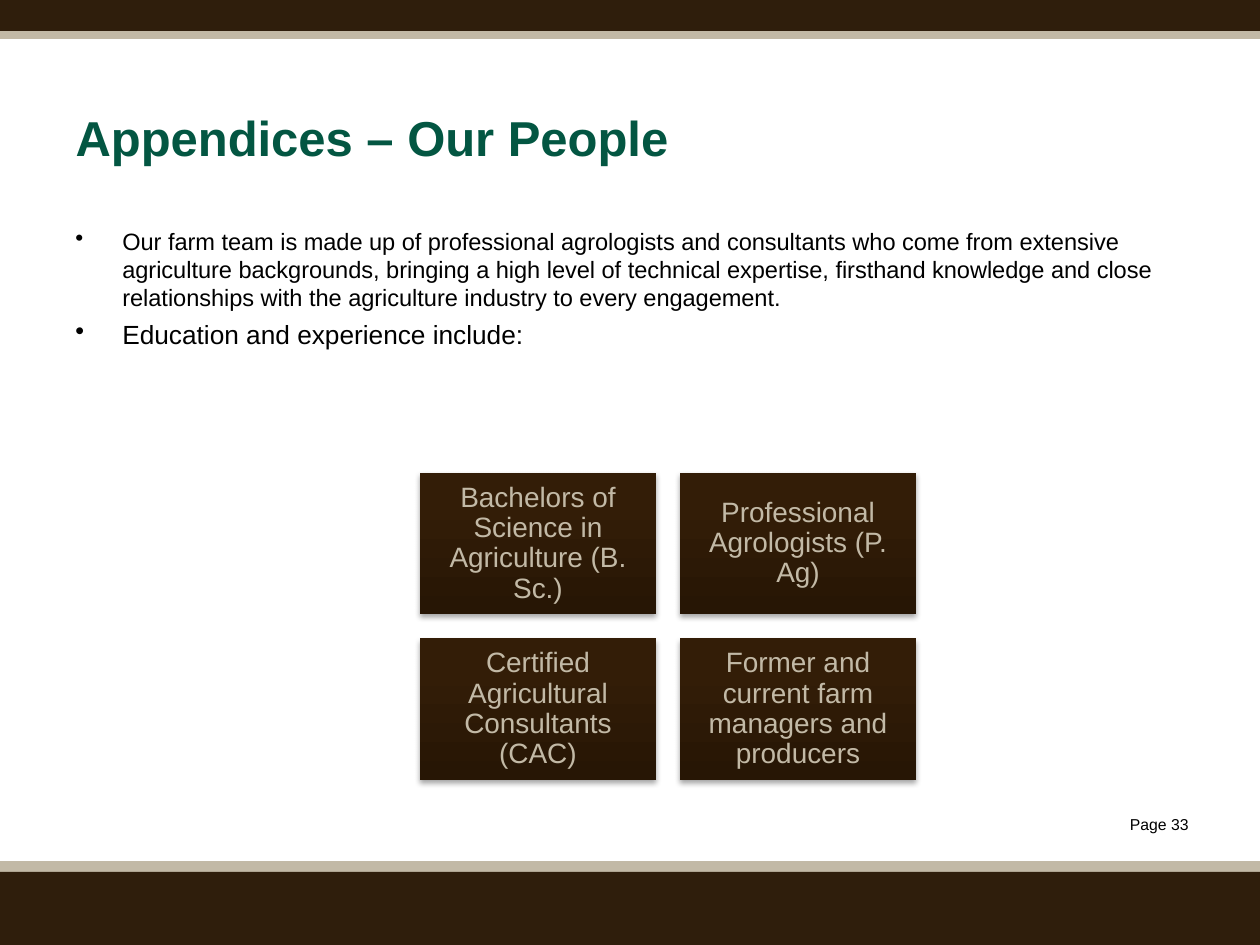
from lxml import etree
from pptx import Presentation, util as u
from pptx.dml.color import RGBColor
from pptx.enum import shapes, text
from pptx.oxml.ns import qn

PX = u.Inches(1) / 126
WIDTH, HEIGHT = 1260, 945
FONT = "Arial"
COLORS = {
    "brown": "2F1E0C",
    "tan": "C2B9A6",
    "green": "035642",
    "black": "000000",
    "card_bottom": "271605",
    "card_top": "331D07",
}
CREDENTIALS = [
    "Bachelors of Science in Agriculture (B. Sc.)",
    "Professional Agrologists (P. Ag)",
    "Certified Agricultural Consultants (CAC)",
    "Former and current farm managers and producers",
]
BULLETS = [
    ("Our farm team is made up of professional agrologists and consultants who come "
     "from extensive agriculture backgrounds, bringing a high level of technical "
     "expertise, firsthand knowledge and close relationships with the agriculture "
     "industry to every engagement.", 13.5),
    ("Education and experience include:", 15),
]


def px(value):
    return u.Emu(round(value * PX))


def color(name):
    return RGBColor.from_string(COLORS[name])


def style(paragraph, size, color_name, bold=False):
    font = paragraph.font
    font.name, font.size, font.bold = FONT, u.Pt(size), bold
    font.color.rgb = color(color_name)


def add_rectangle(slide, left, top, width, height):
    shape = slide.shapes.add_shape(
        shapes.MSO_SHAPE.RECTANGLE, px(left), px(top), px(width), px(height))
    shape.line.fill.background()
    shape.shadow.inherit = False
    return shape


def add_bands(slide, bands):
    for top, height, color_name in bands:
        band = add_rectangle(slide, 0, top, WIDTH, height)
        band.fill.solid()
        band.fill.fore_color.rgb = color(color_name)


def set_title(slide, left, top, width, height):
    title = slide.shapes.title
    title.left, title.top, title.width, title.height = map(
        px, (left, top, width, height))
    frame = title.text_frame
    frame.text = "Appendices – Our People"
    frame.vertical_anchor = text.MSO_ANCHOR.TOP
    frame.margin_top = px(12)
    paragraph = frame.paragraphs[0]
    paragraph.alignment = text.PP_ALIGN.LEFT
    style(paragraph, 28, "green", bold=True)


def add_bullets(slide, left, top, width, height):
    box = slide.shapes.add_textbox(px(left), px(top), px(width), px(height))
    frame = box.text_frame
    frame.word_wrap = True
    for index, (wording, size) in enumerate(BULLETS):
        paragraph = frame.add_paragraph() if index else frame.paragraphs[0]
        paragraph.text = wording
        properties = paragraph._p.get_or_add_pPr()
        properties.set("marL", str(px(47)))
        properties.set("indent", str(px(-47)))
        etree.SubElement(properties, qn("a:buChar"), char="•")
        if index:
            paragraph.space_before = u.Pt(4)
        else:
            paragraph.line_spacing = u.Pt(16)
        style(paragraph, size, "black")


def add_card_shadow(card):
    effects = card._element.spPr.find(qn("a:effectLst"))
    shadow = etree.SubElement(
        effects, qn("a:outerShdw"), blurRad=str(u.Pt(3.1)), dist=str(u.Pt(1.8)),
        dir="5400000", rotWithShape="0")
    shade = etree.SubElement(shadow, qn("a:srgbClr"), val=COLORS["black"])
    etree.SubElement(shade, qn("a:alpha"), val="35000")


def add_card(slide, left, top, width, height, wording):
    card = add_rectangle(slide, left, top, width, height)
    card.fill.gradient()
    card.fill.gradient_angle = 90
    stops = zip(card.fill.gradient_stops, (0, 0.8), ("card_bottom", "card_top"))
    for stop, position, color_name in stops:
        stop.position = position
        stop.color.rgb = color(color_name)
    add_card_shadow(card)
    frame = card.text_frame
    frame.word_wrap = True
    frame.vertical_anchor = text.MSO_ANCHOR.MIDDLE
    frame.margin_left = frame.margin_right = px(9)
    frame.margin_top = frame.margin_bottom = px(9)
    frame.text = wording
    paragraph = frame.paragraphs[0]
    paragraph.alignment = text.PP_ALIGN.CENTER
    paragraph.line_spacing = 0.9
    style(paragraph, 16, "tan")


def add_card_grid(slide, left, top, width, height, columns=2, gap=24):
    rows = len(CREDENTIALS) // columns
    card_width = (width - gap * (columns - 1)) / columns
    card_height = (height - gap * (rows - 1)) / rows
    for index, wording in enumerate(CREDENTIALS):
        row, column = divmod(index, columns)
        add_card(slide, left + column * (card_width + gap),
                 top + row * (card_height + gap), card_width, card_height, wording)


def add_page_number(slide, left, top, width, height):
    box = slide.shapes.add_textbox(px(left), px(top), px(width), px(height))
    frame = box.text_frame
    frame.word_wrap = True
    frame.text = "Page 33"
    paragraph = frame.paragraphs[0]
    paragraph.alignment = text.PP_ALIGN.RIGHT
    style(paragraph, 9, "black")


def main():
    presentation = Presentation()
    presentation.slide_width, presentation.slide_height = px(WIDTH), px(HEIGHT)
    slide = presentation.slides.add_slide(presentation.slide_layouts[5])
    add_bands(slide, [(861, 21, "tan"), (872, 73, "brown"),
                      (29, 10, "tan"), (0, 31, "brown")])
    add_page_number(slide, 1065, 809, 136, 31)
    set_title(slide, 63, 95, 903, 101)
    add_bullets(slide, 63, 221, 1134, 467)
    add_card_grid(slide, 420, 473, 496, 307)
    presentation.save("out.pptx")


if __name__ == "__main__":
    main()
